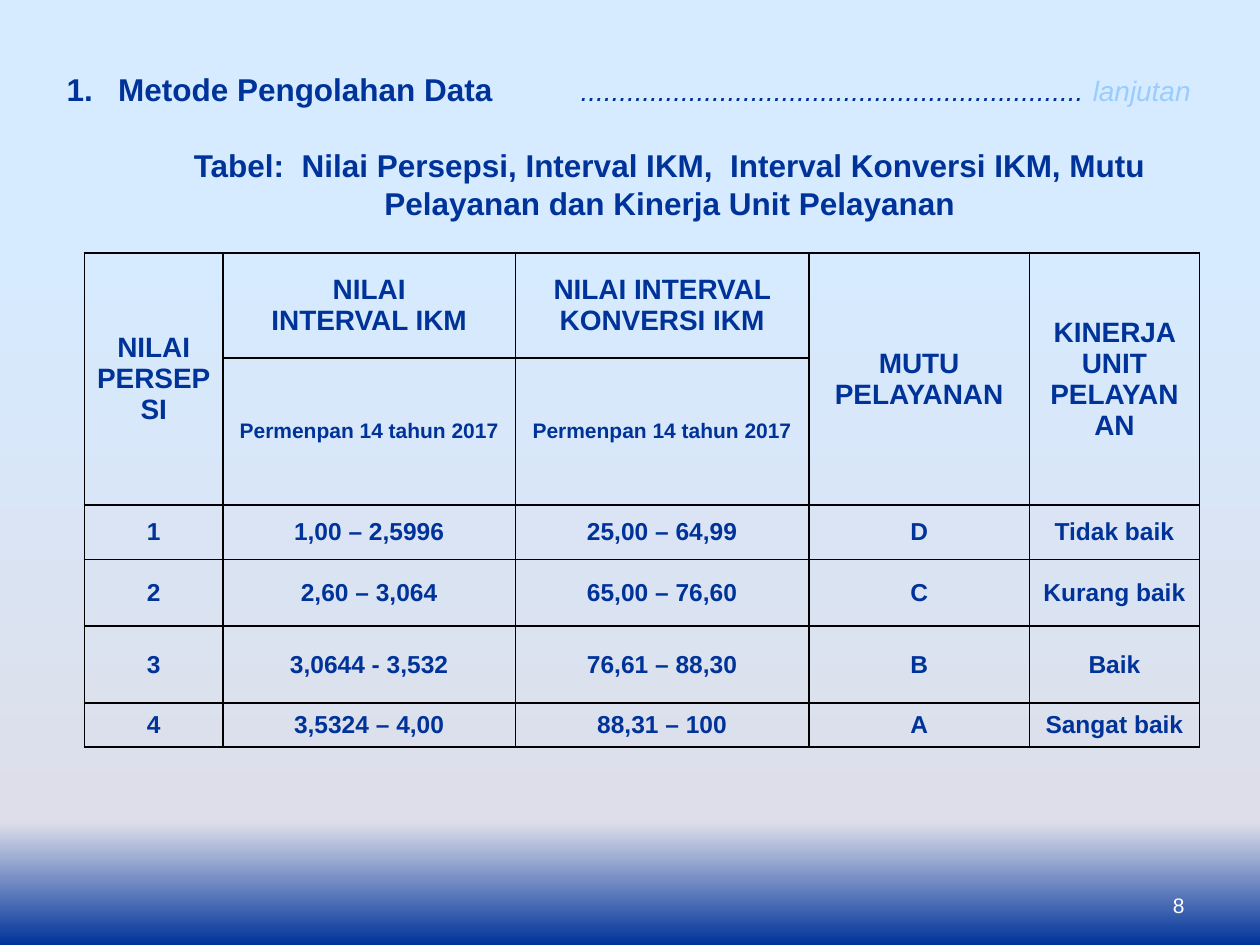
from copy import deepcopy

from pptx import Presentation
from pptx.dml.color import RGBColor
from pptx.enum.text import MSO_ANCHOR, PP_ALIGN
from pptx.oxml.ns import qn
from pptx.util import Inches, Pt
from lxml import etree

TOP, MIDDLE, BOTTOM = MSO_ANCHOR.TOP, MSO_ANCHOR.MIDDLE, MSO_ANCHOR.BOTTOM
LEFT, CENTER, RIGHT = PP_ALIGN.LEFT, PP_ALIGN.CENTER, PP_ALIGN.RIGHT
NAVY, SKY, WHITE, BLACK = "003399", "99CCFF", "FFFFFF", "000000"
STOPS = [(26, "D6EBFF"), (87, "DDDEEA"), (100, NAVY)]
TABS = [0.41, 4.08]
COLS = [1.1, 2.32, 2.33, 1.75, 1.35]
ROWS = [0.83, 1.17, 0.43, 0.53, 0.61, 0.35]
SIZES = [16, 12, 14, 14, 14, 14]
MERGED = [0, 3, 4]
CELLS = [
    ["NILAI\nPERSEPSI", "NILAI\nINTERVAL IKM", "NILAI INTERVAL KONVERSI IKM",
     "MUTU PELAYANAN", "KINERJA UNIT PELAYANAN"],
    ["", "Permenpan 14 tahun 2017", "Permenpan 14 tahun 2017", "", ""],
    ["1", "1,00 – 2,5996", "25,00 – 64,99", "D", "Tidak baik"],
    ["2", "2,60 – 3,064", "65,00 – 76,60", "C", "Kurang baik"],
    ["3", "3,0644 - 3,532", "76,61 – 88,30", "B", "Baik"],
    ["4", "3,5324 – 4,00", "88,31 – 100", "A", "Sangat baik"],
]


def color(code):
    return RGBColor.from_string(code)


def style(font, size, code, bold=False, italic=False):
    font.name = "Arial"
    font.size = Pt(size)
    font.bold = bold
    font.italic = italic
    font.color.rgb = color(code)


def write(frame, text, size, code, align, bold=False):
    frame.text = text
    for para in frame.paragraphs:
        para.alignment = align
        style(para.font, size, code, bold)


def add_frame(slide, box, anchor):
    frame = slide.shapes.add_textbox(*map(Inches, box)).text_frame
    frame.word_wrap = True
    frame.vertical_anchor = anchor
    return frame


def paint(slide):
    fill = slide.background.fill
    fill.gradient()
    fill.gradient_angle = 270
    stops = next(slide.element.iter(qn("a:gsLst")))
    stops.append(deepcopy(stops[0]))
    for stop, (place, code) in zip(fill.gradient_stops, STOPS):
        stop.position = place / 100
        stop.color.rgb = color(code)


def add_heading(slide, box):
    para = add_frame(slide, box, TOP).paragraphs[0]
    para.alignment = LEFT
    tabs = etree.SubElement(para._p.get_or_add_pPr(), qn("a:tabLst"))
    for place in TABS:
        etree.SubElement(tabs, qn("a:tab"), pos=str(Inches(place)), algn="l")
    parts = [("1.\tMetode Pengolahan Data\t", 18, NAVY, True),
             ("." * 65 + " ", 16, NAVY, False),
             ("lanjutan", 16, SKY, False)]
    for text, size, code, bold in parts:
        run = para.add_run()
        run.text = text
        style(run.font, size, code, bold, not bold)


def add_caption(slide, box):
    frame = add_frame(slide, box, TOP)
    frame.margin_top = Inches(0.06)
    write(frame, "Tabel:  Nilai Persepsi, Interval IKM,  Interval Konversi IKM, Mutu\n"
          "Pelayanan dan Kinerja Unit Pelayanan", 18, NAVY, CENTER, True)


def add_border(cell):
    props = cell._tc.get_or_add_tcPr()
    for side in ("lnL", "lnR", "lnT", "lnB"):
        line = etree.SubElement(props, qn("a:" + side), w=str(Pt(1)))
        fill = etree.SubElement(line, qn("a:solidFill"))
        etree.SubElement(fill, qn("a:srgbClr"), val=BLACK)


def add_grid(slide, box):
    table = slide.shapes.add_table(len(ROWS), len(COLS), *map(Inches, box)).table
    table.first_row = table.horz_banding = False
    for col, width in zip(table.columns, COLS):
        col.width = Inches(width)
    for row, height, texts, size in zip(table.rows, ROWS, CELLS, SIZES):
        row.height = Inches(height)
        for cell, text in zip(row.cells, texts):
            add_border(cell)
            cell.fill.background()
            cell.vertical_anchor = MIDDLE
            write(cell.text_frame, text, size, NAVY, CENTER, True)
    for col in MERGED:
        table.cell(0, col).merge(table.cell(1, col))


def add_number(slide, box):
    write(add_frame(slide, box, BOTTOM), "8", 12, WHITE, RIGHT)


def main():
    deck = Presentation()
    deck.slide_width, deck.slide_height = Inches(10), Inches(7.5)
    slide = deck.slides.add_slide(deck.slide_layouts[6])
    paint(slide)
    add_number(slide, (7.17, 6.83, 2.33, 0.5))
    add_caption(slide, (0.98, 1.1, 8.67, 1))
    add_grid(slide, (0.67, 2.01, sum(COLS), sum(ROWS)))
    add_heading(slide, (0.43, 0.51, 9.19, 0.4))
    deck.save("out.pptx")


if __name__ == "__main__":
    main()
